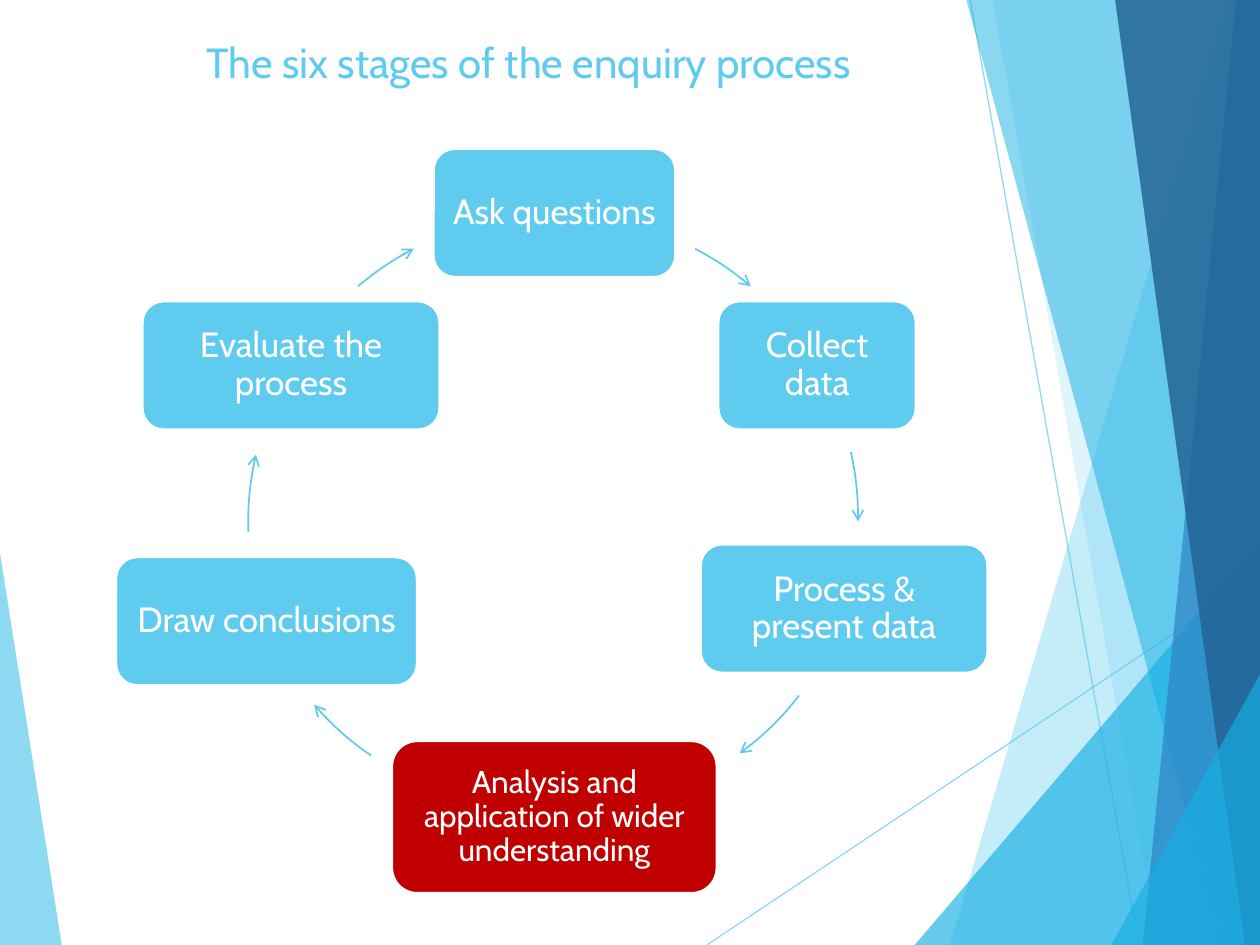
import pptx
import pptx.util
import pptx.dml.color
import pptx.enum.shapes
import pptx.enum.text
import pptx.oxml
import pptx.oxml.ns
from pptx.util import Inches

RGBColor = pptx.dml.color.RGBColor
SKY = RGBColor(0x5F, 0xCB, 0xEF)
CYAN = RGBColor(0x17, 0xB0, 0xE4)
BLUE = RGBColor(0x2E, 0x83, 0xC3)
NAVY = RGBColor(0x22, 0x62, 0x92)
RED = RGBColor(0xC0, 0x00, 0x00)
WHITE = RGBColor(0xFF, 0xFF, 0xFF)

FONT = "Cabin"
WIDTH, HEIGHT = 10, 7.5
RING = 4.82  # diameter of the circle the arrows follow

LEFT_FACET = ([(0, 4.39), (0.49, HEIGHT), (0, HEIGHT)], SKY, 70)
THIN_LINES = [((5.61, 7.5), (10, 4.57)), ((7.7, 0), (9.04, 7.5))]
# Right-hand facets: x at the top edge, x at the bottom edge, colour, opacity
FULL_FACETS = [
    (9.75, 7.54, SKY, 36),
    (7.88, 9.19, SKY, 20),
    (7.67, 9.7, CYAN, 50),
    (9.81, 9.07, BLUE, 70),
    (8.85, 9.88, NAVY, 82),
]
# Corner facets: x at the bottom edge, y at the right edge
LARGE_CORNER = (7.26, 4.29)
SMALL_CORNER = (8.82, 5.35)

# Stage: text, box (left, top, width, height), fill, text size
STAGES = [
    ("Ask questions", (3.44, 1.18, 1.92, 1.02), SKY, 20),
    ("Collect data", (5.7, 2.39, 1.57, 1.02), SKY, 20),
    ("Process & present data", (5.56, 4.32, 2.28, 1.02), SKY, 20),
    ("Analysis and application of wider understanding",
     (3.11, 5.88, 2.58, 1.21), RED, 18),
    ("Draw conclusions", (0.92, 4.42, 2.39, 1.02), SKY, 20),
    ("Evaluate the process", (1.13, 2.39, 2.36, 1.02), SKY, 20),
]
# Arrow: left and top of its circle, start and end angle (clockwise from east)
ARROWS = [
    (1.99, 1.7, 297.6, 310.3),
    (1.99, 1.7, 347.5, 0.7),
    (2.03, 1.63, 37.9, 53.6),
    (1.9, 1.6, 124.5, 138.9),
    (1.97, 1.74, 178.3, 193),
    (1.99, 1.7, 229.7, 242.4),
]


def add_child(parent, tag, **attributes):
    child = pptx.oxml.parse_xml(
        f"<a:{tag} {pptx.oxml.ns.nsdecls('a')}/>")
    for name, value in attributes.items():
        child.set(name, value)
    parent.append(child)


def set_opacity(parent, percent):
    for colour in parent.iter(pptx.oxml.ns.qn("a:srgbClr")):
        add_child(colour, "alpha", val=str(percent * 1000))


def format_span(span, size, colour):
    span.font.name = FONT
    span.font.size = pptx.util.Pt(size)
    span.font.color.rgb = colour


def add_facet(page, points, colour, opacity):
    corners = [(Inches(x), Inches(y)) for x, y in points]
    builder = page.shapes.build_freeform(*corners[0], scale=1.0)
    builder.add_line_segments(corners[1:], close=True)
    facet = builder.convert_to_shape()
    facet.shadow.inherit = False
    facet.fill.solid()
    facet.fill.fore_color.rgb = colour
    facet.line.fill.background()
    set_opacity(facet.element.spPr, opacity)


def add_corner(page, bottom_x, right_y):
    points = [(bottom_x, HEIGHT), (WIDTH, right_y), (WIDTH, HEIGHT)]
    add_facet(page, points, CYAN, 66)


def add_thin_line(page, start, end):
    line = page.shapes.add_connector(
        pptx.enum.shapes.MSO_CONNECTOR.STRAIGHT,
        *(Inches(value) for value in start + end))
    line.line.color.rgb = SKY
    line.line.width = pptx.util.Pt(0.75)
    set_opacity(line.line._ln, 70)
    add_child(line._element.spPr, "effectLst")


def add_backdrop(page):
    add_facet(page, *LEFT_FACET)
    for start, end in THIN_LINES:
        add_thin_line(page, start, end)
    for index, (top_x, bottom_x, colour, opacity) in enumerate(FULL_FACETS):
        if index == 2:  # the large corner lies above the two palest facets
            add_corner(page, *LARGE_CORNER)
        points = [(top_x, 0), (bottom_x, HEIGHT), (WIDTH, HEIGHT), (WIDTH, 0)]
        add_facet(page, points, colour, opacity)
    add_corner(page, *SMALL_CORNER)


def add_stage(page, text, bounds, fill, size):
    box = page.shapes.add_shape(
        pptx.enum.shapes.MSO_SHAPE.ROUNDED_RECTANGLE,
        *(Inches(value) for value in bounds))
    box.shadow.inherit = False
    box.fill.solid()
    box.fill.fore_color.rgb = fill
    box.line.color.rgb = WHITE
    box.line.width = pptx.util.Pt(1.5)

    frame = box.text_frame
    frame.text = text
    frame.word_wrap = True
    frame.vertical_anchor = pptx.enum.text.MSO_ANCHOR.MIDDLE
    inset = Inches(size * 0.004)
    frame.margin_left = frame.margin_right = inset
    frame.margin_top = frame.margin_bottom = inset
    para = frame.paragraphs[0]
    para.alignment = pptx.enum.text.PP_ALIGN.CENTER
    para.line_spacing = 0.9
    format_span(para.runs[0], size, WHITE)


def add_arrow(page, left, top, start, end):
    arc = page.shapes.add_shape(
        pptx.enum.shapes.MSO_SHAPE.ARC,
        *(Inches(value) for value in (left, top, RING, RING)))
    # Angles are stored in 60000ths of a degree, adjustments in 100000ths
    arc.adjustments[0] = start * 0.6
    arc.adjustments[1] = end * 0.6
    arc.shadow.inherit = False
    arc.fill.background()
    arc.line.color.rgb = SKY
    arc.line.width = pptx.util.Pt(1)
    add_child(arc.line._ln, "tailEnd", type="arrow")


def add_cycle(page):
    for stage, arrow in zip(STAGES, ARROWS):
        add_stage(page, *stage)
        add_arrow(page, *arrow)


def add_title(page, left, top, width, height):
    box = page.shapes.add_textbox(left, top, width, height)
    box.text_frame.word_wrap = True
    box.text_frame.text = "The six stages of the enquiry process"
    format_span(box.text_frame.paragraphs[0].runs[0], 24, SKY)


def main():
    deck = pptx.Presentation()
    deck.slide_width, deck.slide_height = Inches(WIDTH), Inches(HEIGHT)
    page = deck.slides.add_slide(deck.slide_layouts[6])
    add_backdrop(page)
    add_cycle(page)
    add_title(page, Inches(1.54), Inches(0.24), Inches(6.94), Inches(1.44))
    deck.save("out.pptx")


if __name__ == "__main__":
    main()
